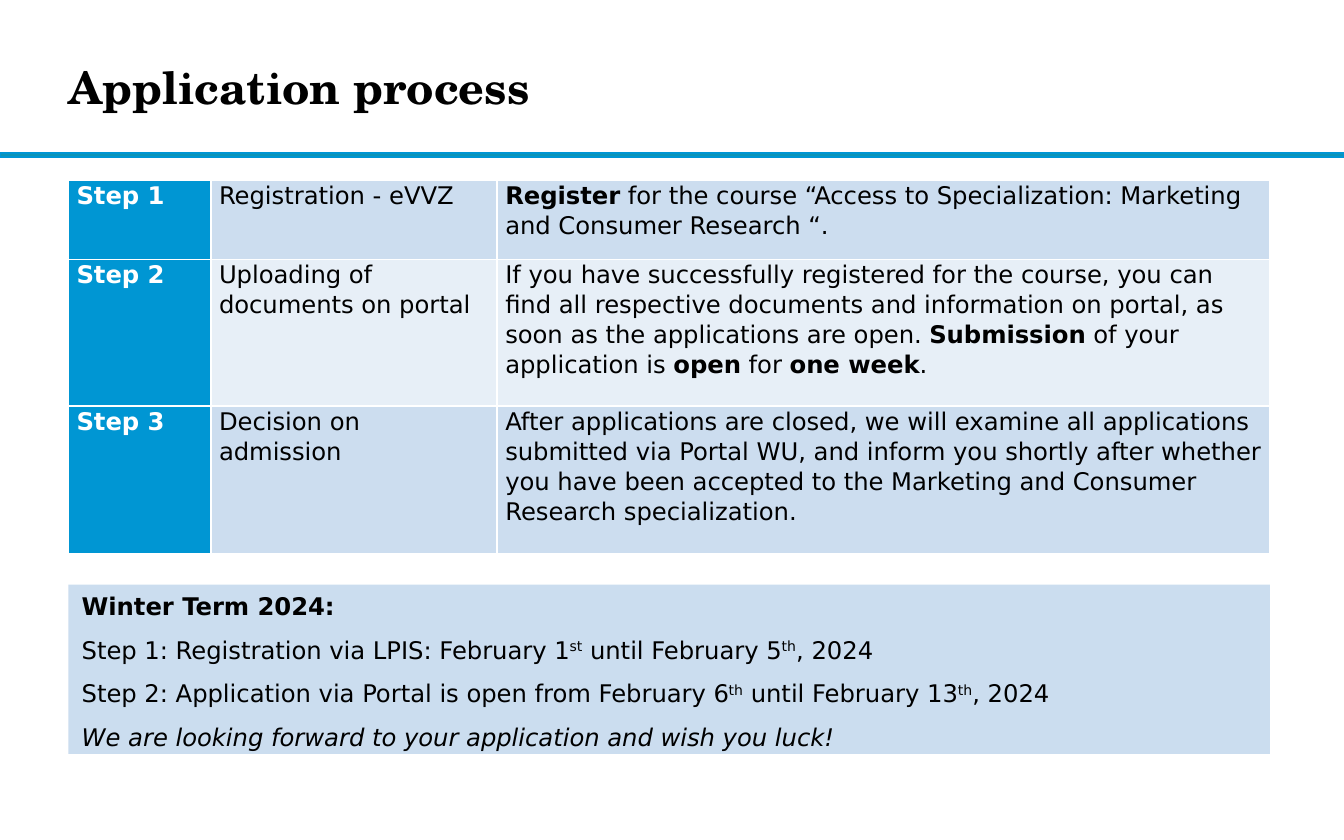
from dataclasses import dataclass

from lxml.etree import SubElement
from pptx import Presentation
from pptx.dml.color import RGBColor
from pptx.enum.shapes import MSO_SHAPE
from pptx.enum.text import MSO_ANCHOR, PP_ALIGN
from pptx.oxml.ns import qn
from pptx.util import Inches, Pt


@dataclass(frozen=True)
class Theme:
    black: str = "000000"
    white: str = "FFFFFF"
    accent: str = "0096D3"
    rule: str = "0C94B7"
    band_dark: str = "CCDDEF"
    band_light: str = "E7EFF7"
    notice: str = "CBDDEF"
    title_font: str = "TeX Gyre Schola"
    body_font: str = "DejaVu Sans"
    title_size: int = 24
    body_size: int = 13


THEME = Theme()
BOLD, ITALIC, SUPER = "bold", "italic", "super"
LEFT, WIDTH = 0.51, 8.94

# Each text is a list of (words, style) runs
STEPS = [
    ("Step 1", "Registration - eVVZ", [
        ("Register", BOLD),
        (" for the course “Access to Specialization: Marketing and Consumer Research “.", None),
    ]),
    ("Step 2", "Uploading of documents on portal", [
        ("If you have successfully registered for the course, you can find all respective "
         "documents and information on portal, as soon as the applications are open. ", None),
        ("Submission", BOLD), (" of your application is ", None),
        ("open", BOLD), (" for ", None), ("one week", BOLD), (".", None),
    ]),
    ("Step 3", "Decision on admission", [
        ("After applications are closed, we will examine all applications submitted via "
         "Portal WU, and inform you shortly after whether you have been accepted to the "
         "Marketing and Consumer Research specialization.", None),
    ]),
]
DATES = [
    [("Winter Term 2024:", BOLD)],
    [("Step 1: Registration via LPIS: February 1", None), ("st", SUPER),
     (" until February 5", None), ("th", SUPER), (", 2024", None)],
    [("Step 2: Application via Portal is open from February 6", None), ("th", SUPER),
     (" until February 13", None), ("th", SUPER), (", 2024", None)],
    [("We are looking forward to your application and wish you luck!", ITALIC)],
]


def set_all(target, values):
    for name, value in values.items():
        setattr(target, name, value)


def margins(side, top):
    return {"margin_left": Inches(side), "margin_right": Inches(side),
            "margin_top": Inches(top), "margin_bottom": Inches(top)}


def paint(fill, color):
    fill.solid()
    fill.fore_color.rgb = RGBColor.from_string(color)


def write(paragraph, runs, color=THEME.black, font=THEME.body_font,
          size=THEME.body_size, **spacing):
    set_all(paragraph, {"alignment": PP_ALIGN.LEFT, **spacing})
    for words, style in runs:
        run = paragraph.add_run()
        run.text = words
        set_all(run.font, {"name": font, "size": Pt(size),
                           "bold": style == BOLD, "italic": style == ITALIC})
        run.font.color.rgb = RGBColor.from_string(color)
        if style == SUPER:
            run.font._element.set("baseline", "30000")


def add_panel(slide, box, color):
    panel = slide.shapes.add_shape(MSO_SHAPE.RECTANGLE, *map(Inches, box))
    panel.shadow.inherit = False
    paint(panel.fill, color)
    panel.line.fill.background()
    return panel


def outline_cell(cell):
    properties = cell._tc.get_or_add_tcPr()
    for position, side in enumerate(("lnL", "lnR", "lnT", "lnB")):
        line = SubElement(properties, qn(f"a:{side}"), w=str(Pt(1)))
        fill = SubElement(line, qn("a:solidFill"))
        SubElement(fill, qn("a:srgbClr"), val=THEME.white)
        properties.insert(position, line)  # borders come before the fill


def add_header(slide, left, top, width, height):
    # Title
    title = slide.shapes.add_textbox(*map(Inches, (left, top, width, height)))
    set_all(title.text_frame, {"word_wrap": True, "vertical_anchor": MSO_ANCHOR.MIDDLE,
                               **margins(0, 0)})
    write(title.text_frame.paragraphs[0], [("Application process", BOLD)],
          font=THEME.title_font, size=THEME.title_size)

    # Full-width rule under the title
    rule = add_panel(slide, (0, top + height, 10, 0.03), THEME.rule)
    paint(rule.line.fill, THEME.accent)
    rule.line.width = Pt(1)


def add_steps(slide, left, top, width, height):
    frame = slide.shapes.add_table(len(STEPS), 3, *map(Inches, (left, top, width, height)))
    table = frame.table
    set_all(table, {"first_row": False, "horz_banding": False})
    label_width, topic_width = 1.06, 2.13
    for column, size in zip(table.columns,
                            (label_width, topic_width, width - label_width - topic_width)):
        column.width = Inches(size)
    for row, size in zip(table.rows, (0.59, 1.09, 1.1)):
        row.height = Inches(size)

    for index, (label, topic, details) in enumerate(STEPS):
        band = THEME.band_light if index % 2 else THEME.band_dark
        contents = [
            ([(label, BOLD)], THEME.white, THEME.accent),
            ([(topic, None)], THEME.black, band),
            (details, THEME.black, band),
        ]
        for cell, (runs, color, fill) in zip(table.rows[index].cells, contents):
            set_all(cell, {"vertical_anchor": MSO_ANCHOR.TOP, **margins(0.06, 0)})
            paint(cell.fill, fill)
            outline_cell(cell)
            write(cell.text_frame.paragraphs[0], runs, color,
                  line_spacing=1.07, space_after=Pt(8))


def add_dates(slide, left, top, width, height):
    text = add_panel(slide, (left, top, width, height), THEME.notice).text_frame
    set_all(text, {"word_wrap": True, "vertical_anchor": MSO_ANCHOR.TOP,
                   **margins(0.1, 0.05)})
    for index, runs in enumerate(DATES):
        paragraph = text.add_paragraph() if index else text.paragraphs[0]
        write(paragraph, runs, line_spacing=1.5 if index else 1.0)


def main():
    deck = Presentation()
    set_all(deck, {"slide_width": Inches(10), "slide_height": Inches(6.25)})
    slide = deck.slides.add_slide(deck.slide_layouts[6])
    add_header(slide, LEFT, 0.15, 7.48, 0.99)
    add_steps(slide, LEFT, 1.34, WIDTH, 2.78)
    add_dates(slide, LEFT, 4.35, WIDTH, 1.26)
    deck.save("out.pptx")


if __name__ == "__main__":
    main()
